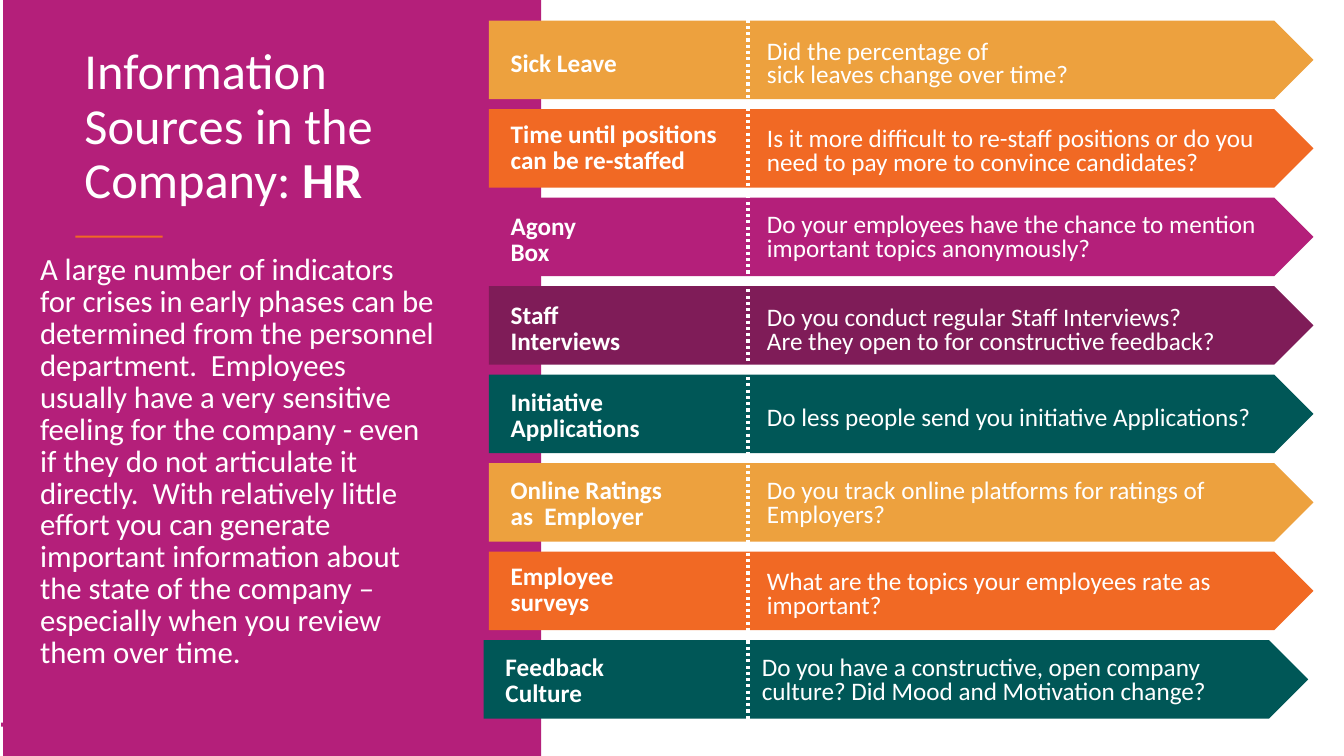
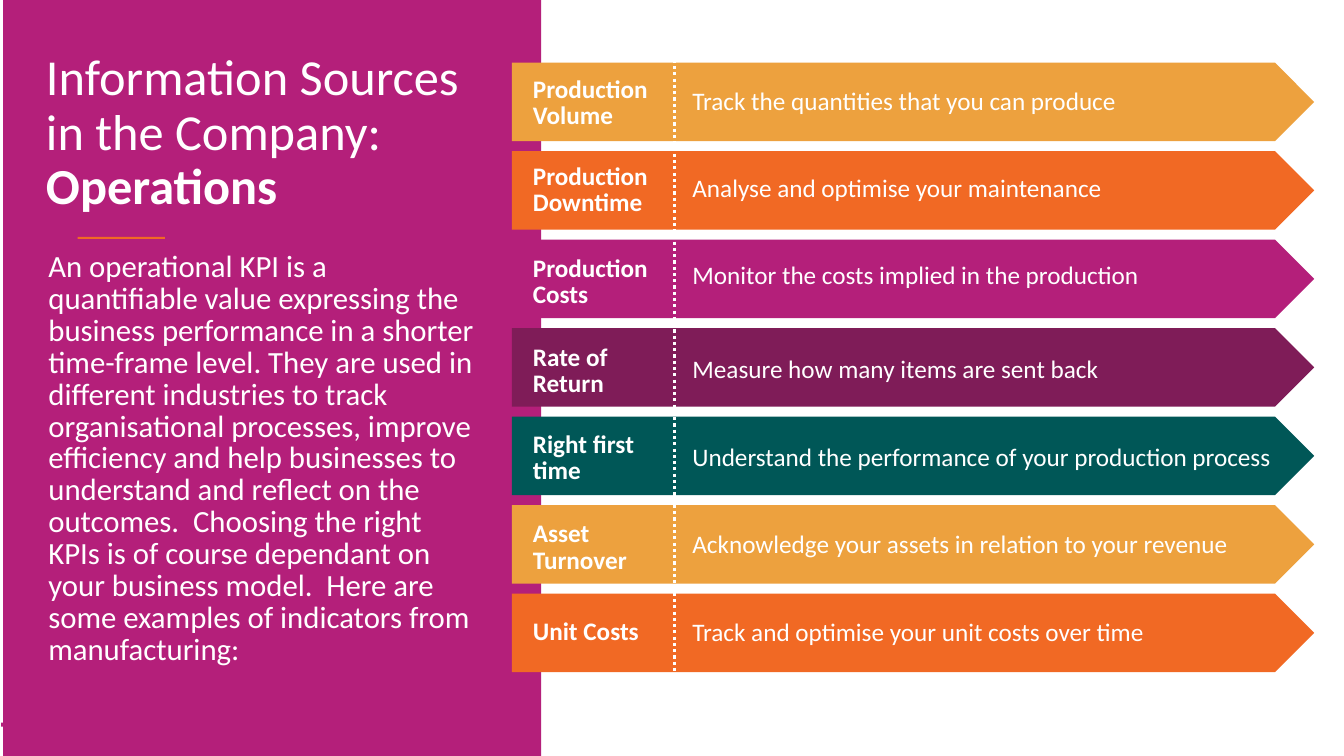
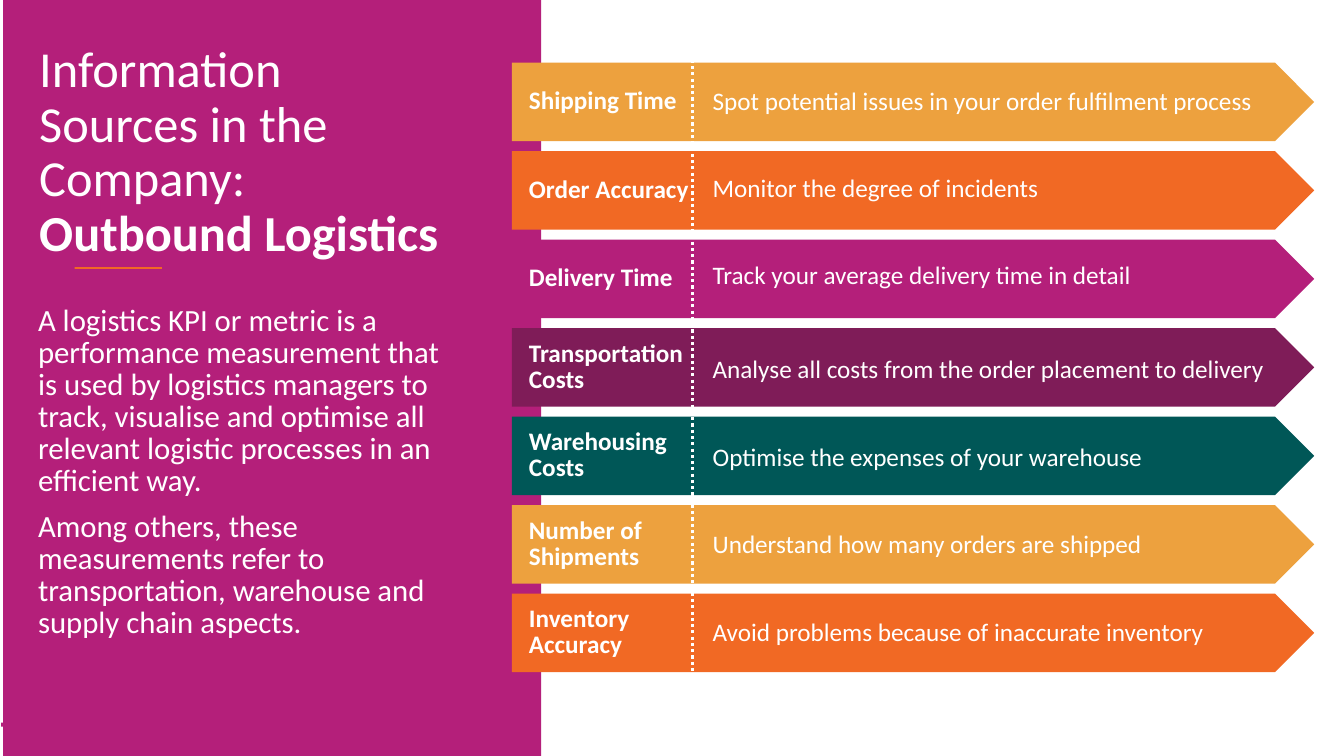
from lxml import etree
from pptx import Presentation
from pptx.dml.color import RGBColor
from pptx.enum import dml, shapes, text
from pptx.oxml.ns import qn
from pptx.util import Cm, Pt

WHITE, PINK, ORANGE = "FFFFFF", "B41F7A", "F16924"
GOLD, PLUM, TEAL = "EDA13E", "7F1C58", "005757"
CYCLE = [GOLD, ORANGE, PINK, PLUM, TEAL]
FONT = "Calibri"
PITCH, TALL = 2.23, 1.98
WIDE, HIGH = 33.87, 19.05
LEAD = "Information Sources in the Company: "
DROPS = [0.05, 0, -0.03, 0.1, 0.1, 0.05, 0.05]

SLIDES = [
    {
        "topic": "HR",
        "title": (1.88, 1.04, 10.46, 6.8),
        "rule": (1.9, 5.94),
        "body": (0.76, 6.3, 10.44, 12.45),
        "paras": [
            "A large number of indicators for crises in early phases can be determined "
            "from the personnel department.  Employees usually have a very sensitive "
            "feeling for the company - even if they do not articulate it directly.  "
            "With relatively little effort you can generate important information about "
            "the state of the company – especially when you review them over time."],
        "arrow": (12.32, 0.52, 20.78),
        "cols": (12.62, 19.23, 12.75),
        "line": (18.85, 0.18, 19.05),
        "rows": [
            ("Sick Leave", "Did the percentage of\nsick leaves change over time?"),
            ("Time until positions\ncan be re-staffed",
             "Is it more difficult to re-staff positions or do you need to pay more "
             "to convince candidates?"),
            ("Agony\nBox",
             "Do your employees have the chance to mention important topics anonymously?"),
            ("Staff\nInterviews",
             "Do you conduct regular Staff Interviews?\n"
             "Are they open to for constructive feedback?"),
            ("Initiative\nApplications", "Do less people send you initiative Applications?"),
            ("Online Ratings\nas  Employer",
             "Do you track online platforms for ratings of Employers?"),
            ("Employee\nsurveys", "What are the topics your employees rate as important?"),
            ("Feedback\nCulture",
             "Do you have a constructive, open company culture? "
             "Did Mood and Motivation change?"),
        ],
        "tags": [0.11, 0, 0.09, 0.11, 0.06, 0.06, 0, 0.06],
        "drops": [0.13, 0.1, 0.05, 0.15, 0.15, 0.05, 0.13, 0.05],
        "last": (-0.13, TEAL),
    },
    {
        "topic": "Operations",
        "title": (0.91, 1.19, 11.2, 7.62),
        "rule": (1.96, 5.97),
        "body": (0.97, 6.22, 11.35, 11.96),
        "paras": [
            "An operational KPI is a quantifiable value expressing the business "
            "performance in a shorter time-frame level. They are used in different "
            "industries to track organisational processes, improve efficiency and help "
            "businesses to understand and reflect on the outcomes.  Choosing the right "
            "KPIs is of course dependant on your business model.  Here are some examples "
            "of indicators from manufacturing:"],
        "arrow": (12.9, 1.58, 20.22),
        "cols": (13.18, 17.35, 15.24),
        "line": (16.99, 1.19, 17.4),
        "rows": [
            ("Production\nVolume", "Track the quantities that you can produce"),
            ("Production\nDowntime", "Analyse and optimise your maintenance"),
            ("Production\nCosts", "Monitor the costs implied in the production"),
            ("Rate of\nReturn", "Measure how many items are sent back"),
            ("Right first\ntime", "Understand the performance of your production process"),
            ("Asset\nTurnover", "Acknowledge your assets in relation to your revenue"),
            ("Unit Costs", "Track and optimise your unit costs over time"),
        ],
        "tags": [0.04, 0, 0.09, 0.11, 0.06, 0.09, 0],
        "drops": DROPS,
        "last": (0, ORANGE),
    },
    {
        "topic": "Outbound Logistics",
        "title": (0.74, 0.99, 10.72, 7.62),
        "rule": (1.88, 6.73),
        "body": (0.71, 7.59, 10.82, 10.46),
        "paras": [
            "A logistics KPI or metric is a performance measurement that is used by "
            "logistics managers to track, visualise and optimise all relevant logistic "
            "processes in an efficient way.",
            "Among others, these measurements refer to transportation, warehouse and "
            "supply chain aspects."],
        "arrow": (12.9, 1.58, 20.22),
        "cols": (13.08, 17.86, 15.24),
        "line": (17.45, 1.19, 17.4),
        "rows": [
            ("Shipping Time", "Spot potential issues in your order fulfilment process"),
            ("Order Accuracy", "Monitor the degree of incidents"),
            ("Delivery Time", "Track your average delivery time in detail"),
            ("Transportation\nCosts", "Analyse all costs from the order placement to delivery"),
            ("Warehousing\nCosts", "Optimise the expenses of your warehouse"),
            ("Number of\nShipments", "Understand how many orders are shipped"),
            ("Inventory\nAccuracy", "Avoid problems because of inaccurate inventory"),
        ],
        "tags": [0] * 7,
        "drops": DROPS,
        "last": (0, ORANGE),
    },
]


def tint(code):
    return RGBColor.from_string(code)


def block(slide, kind, box, color):
    shape = slide.shapes.add_shape(kind, *map(Cm, box))
    shape.shadow.inherit = False
    shape.fill.solid()
    shape.fill.fore_color.rgb = tint(color)
    shape.line.fill.background()


def style(run, size, bold=False):
    run.font.name, run.font.size, run.font.bold = FONT, Pt(size), bold
    run.font.color.rgb = tint(WHITE)


def write(slide, box, paras, size, space, bold=False, middle=False, pad=None):
    frame = slide.shapes.add_textbox(*map(Cm, box)).text_frame
    frame.word_wrap = True
    if middle:
        frame.vertical_anchor = text.MSO_ANCHOR.MIDDLE
    if pad:
        frame.margin_left = frame.margin_right = Cm(pad[0])
        frame.margin_top = frame.margin_bottom = Cm(pad[1])
    for i, words in enumerate(paras):
        para = frame.add_paragraph() if i else frame.paragraphs[0]
        para.text = words
        para.line_spacing = space
        if i:
            para.space_before = Pt(10)
        for run in para.runs:
            style(run, size, bold)
    return frame


def side(slide, data):
    rect = shapes.MSO_SHAPE.RECTANGLE
    block(slide, rect, (0.03, 18.21, 2.2, 0.1), PINK)
    block(slide, rect, (0.08, 0, 13.56, HIGH), PINK)
    write(slide, data["body"], data["paras"], 22, Pt(22.8))
    title = write(slide, data["title"], [LEAD], 36, 0.9)
    topic = title.paragraphs[0].add_run()
    topic.text = data["topic"]
    style(topic, 36, True)
    block(slide, rect, (*data["rule"], 2.2, 0.05), ORANGE)


def arrows(slide, data):
    left, top, width = data["arrow"]
    tag, ask, span = data["cols"]
    end = len(data["rows"]) - 1
    rows = zip(data["rows"], data["tags"], data["drops"])
    for i, ((label, query), lift, drop) in enumerate(rows):
        shift, color = data["last"] if i == end else (0, CYCLE[i % len(CYCLE)])
        y = top + i * PITCH
        block(slide, shapes.MSO_SHAPE.PENTAGON, (left + shift, y, width, TALL), color)
        write(slide, (tag + shift, y + lift, ask - tag, TALL), [label],
              18, Pt(18.6), bold=True, middle=True)
        write(slide, (ask + shift, y + drop, span, TALL), [query],
              18, Pt(17.1), middle=True, pad=(0.1, 0.05))


def divide(slide, x, top, bottom):
    rule = slide.shapes.add_connector(
        shapes.MSO_CONNECTOR.STRAIGHT, Cm(x), Cm(top), Cm(x), Cm(bottom))
    rule.line.color.rgb = tint(WHITE)
    rule.line.width = Pt(2.25)
    rule.line.dash_style = dml.MSO_LINE.ROUND_DOT
    etree.SubElement(rule._element.spPr, qn("a:effectLst"))


def main():
    deck = Presentation()
    deck.slide_width, deck.slide_height = Cm(WIDE), Cm(HIGH)
    for data in SLIDES:
        slide = deck.slides.add_slide(deck.slide_layouts[6])
        side(slide, data)
        arrows(slide, data)
        divide(slide, *data["line"])
    deck.save("out.pptx")


if __name__ == "__main__":
    main()
